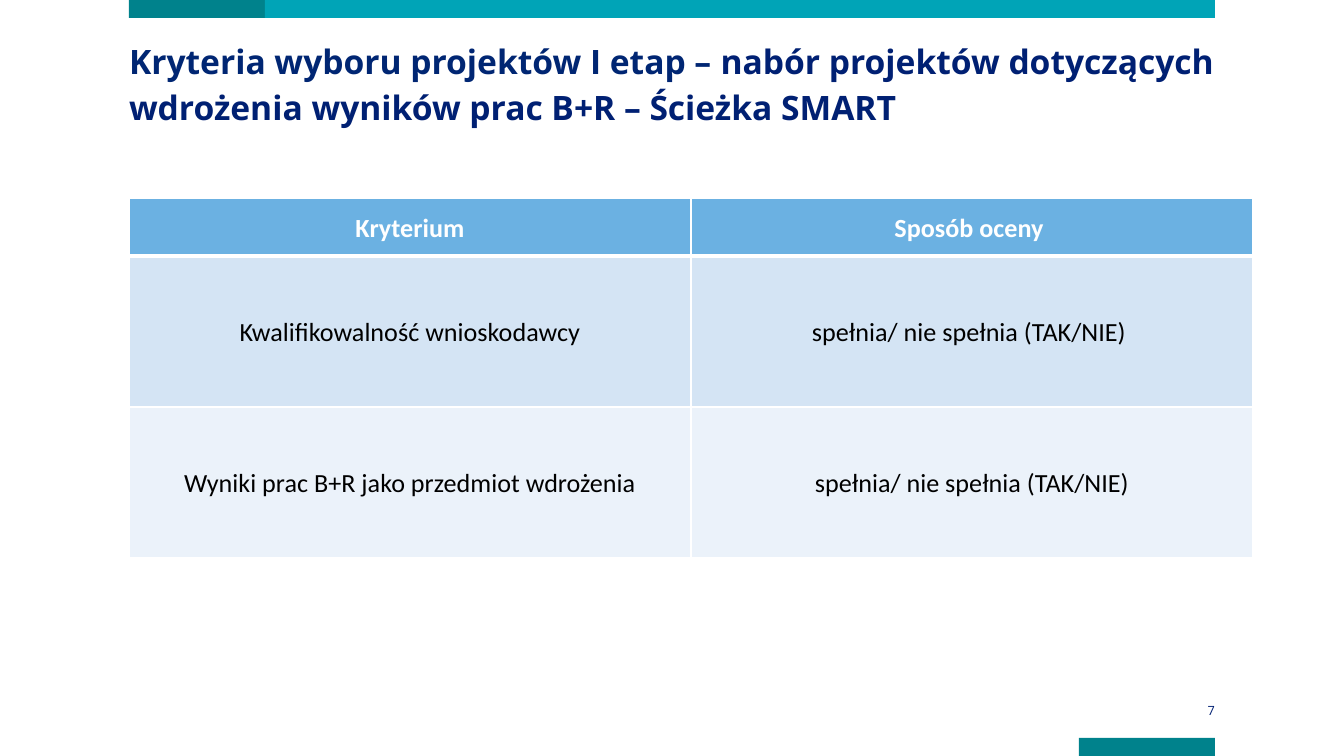
from dataclasses import dataclass

from lxml import etree
from pptx import Presentation
from pptx.dml.color import RGBColor
from pptx.enum.shapes import MSO_SHAPE
from pptx.enum.text import MSO_ANCHOR, MSO_AUTO_SIZE, PP_ALIGN
from pptx.oxml.ns import qn
from pptx.util import Emu, Pt

RECTANGLE = MSO_SHAPE.RECTANGLE
TOP, MIDDLE = MSO_ANCHOR.TOP, MSO_ANCHOR.MIDDLE
LEFT, CENTER, RIGHT = PP_ALIGN.LEFT, PP_ALIGN.CENTER, PP_ALIGN.RIGHT
NO_AUTOFIT = MSO_AUTO_SIZE.NONE
TITLE_ONLY = 5
PX_PER_INCH = 134.4


@dataclass(frozen=True)
class Theme:
    heading_font: str = "Open Sans"
    table_font: str = "Calibri"
    title_size: float = 18
    table_size: float = 14
    number_size: float = 6.8
    navy: str = "002073"
    title_lead: str = "002673"
    dark_teal: str = "00828C"
    teal: str = "00A4B7"
    header_fill: str = "6BB1E2"
    row_fills: tuple = ("D4E4F4", "EBF2FA")
    white: str = "FFFFFF"
    black: str = "000000"


def px(length):
    return Emu(round(length * 914400 / PX_PER_INCH))


def box(*lengths):
    return [px(length) for length in lengths]


class SlideBuilder:
    def __init__(self, slide, theme):
        self.slide = slide
        self.theme = theme

    def add_run(self, paragraph, text, font, size, color, bold=False):
        run = paragraph.add_run()
        run.text = text
        run.font.name = font
        run.font.size = Pt(size)
        run.font.bold = bold
        run.font.color.rgb = RGBColor.from_string(color)

    def prepare_frame(self, shape, anchor, alignment):
        """Clear the insets and return the first paragraph."""
        frame = shape.text_frame
        frame.word_wrap = True
        frame.auto_size = NO_AUTOFIT
        frame.vertical_anchor = anchor
        frame.margin_left = frame.margin_right = 0
        frame.margin_top = frame.margin_bottom = 0
        paragraph = frame.paragraphs[0]
        paragraph.alignment = alignment
        return paragraph

    def bar(self, left, top, width, height, color):
        shape = self.slide.shapes.add_shape(RECTANGLE, *box(left, top, width, height))
        shape.shadow.inherit = False
        shape.fill.solid()
        shape.fill.fore_color.rgb = RGBColor.from_string(color)
        shape.line.fill.background()

    def title(self, left, top, width, height, runs):
        shape = self.slide.shapes.title
        shape.left, shape.top, shape.width, shape.height = box(left, top, width, height)
        paragraph = self.prepare_frame(shape, TOP, LEFT)
        paragraph.line_spacing = Pt(24.5)
        for text, color in runs:
            self.add_run(paragraph, text, self.theme.heading_font,
                         self.theme.title_size, color, bold=True)

    def page_number(self, left, top, width, height, text):
        shape = self.slide.shapes.add_textbox(*box(left, top, width, height))
        paragraph = self.prepare_frame(shape, MIDDLE, RIGHT)
        self.add_run(paragraph, text, self.theme.heading_font,
                     self.theme.number_size, self.theme.navy)

    def cell_borders(self, cell, top, bottom):
        properties = cell._tc.get_or_add_tcPr()
        for side, width in (("L", 1), ("R", 1), ("T", top), ("B", bottom)):
            line = etree.SubElement(properties, qn(f"a:ln{side}"), w=str(Pt(width)))
            fill = etree.SubElement(line, qn("a:solidFill"))
            etree.SubElement(fill, qn("a:srgbClr"), val=self.theme.white)

    def cell(self, cell, text, fill, color, bold, top, bottom):
        self.cell_borders(cell, top, bottom)
        cell.fill.solid()
        cell.fill.fore_color.rgb = RGBColor.from_string(fill)
        cell.vertical_anchor = MIDDLE
        cell.margin_left = cell.margin_right = px(9)
        cell.margin_top = cell.margin_bottom = 0
        paragraph = cell.text_frame.paragraphs[0]
        paragraph.alignment = CENTER
        paragraph.line_spacing = 1.07
        paragraph.space_after = Pt(8)
        self.add_run(paragraph, text, self.theme.table_font,
                     self.theme.table_size, color, bold)

    def table(self, left, top, column_width, row_heights, rows):
        theme = self.theme
        columns = len(rows[0])
        table = self.slide.shapes.add_table(
            len(rows), columns,
            *box(left, top, column_width * columns, sum(row_heights))).table
        table.horz_banding = False
        for column in table.columns:
            column.width = px(column_width)
        for index, (texts, height) in enumerate(zip(rows, row_heights)):
            table.rows[index].height = px(height)
            header = index == 0
            fill = theme.header_fill if header else theme.row_fills[(index - 1) % 2]
            for column, text in enumerate(texts):
                self.cell(table.cell(index, column), text, fill,
                          theme.white if header else theme.black, header,
                          top=3 if index == 1 else 1, bottom=3 if header else 1)


def main():
    theme = Theme()
    presentation = Presentation()
    presentation.slide_width, presentation.slide_height = box(1344, 756)
    slide = presentation.slides.add_slide(presentation.slide_layouts[TITLE_ONLY])
    builder = SlideBuilder(slide, theme)

    margin, content_width, accent_width, bar_height = 129, 1086, 136, 18
    accent_right = margin + content_width - accent_width
    builder.bar(margin, 0, accent_width, bar_height, theme.dark_teal)
    builder.bar(margin + accent_width, 0, content_width - accent_width,
                bar_height, theme.teal)
    builder.bar(accent_right, 756 - bar_height, accent_width, bar_height,
                theme.dark_teal)
    builder.page_number(accent_right, 702, accent_width, bar_height, "7")

    builder.title(margin, 36, 1177, 108, [
        ("Kryteria wyboru projektów I etap – ", theme.title_lead),
        ("nabór projektów dotyczących wdrożenia wyników prac B+R – Ścieżka SMART",
         theme.navy),
    ])
    builder.table(margin, 198, 562, [58, 151, 151], [
        ("Kryterium", "Sposób oceny "),
        ("Kwalifikowalność wnioskodawcy", "spełnia/ nie spełnia (TAK/NIE) "),
        ("Wyniki prac B+R jako przedmiot wdrożenia", "spełnia/ nie spełnia (TAK/NIE)"),
    ])
    presentation.save("out.pptx")


if __name__ == "__main__":
    main()
